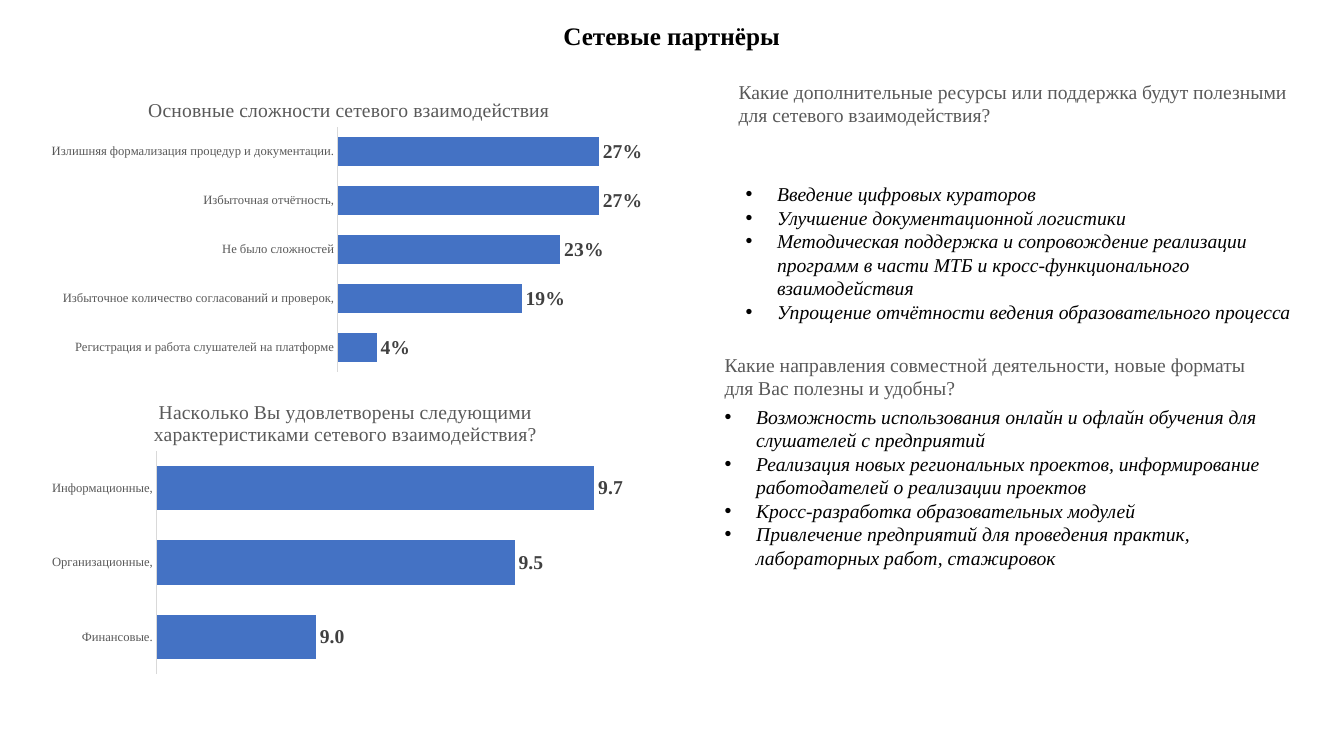
import pptx
import pptx.chart.data
import pptx.dml.color
import pptx.enum.chart
import pptx.enum.text
import pptx.oxml
import pptx.oxml.ns
import pptx.util

Pt = pptx.util.Pt
FONT = "Times New Roman"
BLACK, GREY, DARK, PALE, BLUE = "000000", "595959", "404040", "D9D9D9", "4472C4"

# Content
HEADING = "Сетевые партнёры"
CHARTS = [
    {
        "title": "Основные сложности сетевого взаимодействия",
        "bars": [
            ("Регистрация и работа слушателей на платформе", 0.04),
            ("Избыточное количество согласований и проверок,", 0.19),
            ("Не было сложностей", 0.23),
            ("Избыточная отчётность,", 0.27),
            ("Излишняя формализация процедур и документации.", 0.27),
        ],
        "format": "0%",
        "scale": (0, 0.3),
        "title_at": (0.17, 0.06),
        "plot": (0.49, 0.17, 0.48, 0.81),
    },
    {
        "title": "Насколько Вы удовлетворены следующими\n"
                 "характеристиками сетевого взаимодействия?",
        "bars": [("Финансовые.", 9.0), ("Организационные,", 9.5), ("Информационные,", 9.7)],
        "format": "#,##0.0",
        "scale": (8.6, 9.8),
        "title_at": (0.18, 0.06),
        "plot": (0.19, 0.24, 0.79, 0.74),
    },
]
QUESTIONS = [
    ("Какие дополнительные ресурсы или поддержка будут полезными для сетевого взаимодействия?",
     (520.5, 53.5, 411, 41)),
    ("Какие направления совместной деятельности, новые форматы для Вас полезны и удобны?",
     (510.5, 248.5, 399, 41)),
]
ANSWERS = [
    (["Введение цифровых кураторов",
      "Улучшение документационной логистики",
      "Методическая поддержка и сопровождение реализации программ в части МТБ "
      "и кросс-функционального взаимодействия",
      "Упрощение отчётности ведения образовательного процесса"],
     (525.5, 126.5, 405, 109)),
    (["Возможность использования онлайн и офлайн обучения для слушателей с предприятий",
      "Реализация новых региональных проектов, информирование работодателей о реализации проектов",
      "Кросс-разработка образовательных модулей",
      "Привлечение предприятий для проведения практик, лабораторных работ, стажировок"],
     (510.5, 285.5, 431, 126)),
]
CHART_LEFT, CHART_TOP, CHART_WIDTH, CHART_HEIGHT = 30, 54, 431.5, 216


def color(hex_string):
    return pptx.dml.color.RGBColor.from_string(hex_string)


def style(font, size, hex_string, bold=False, italic=False):
    font.name, font.size = FONT, Pt(size)
    font.bold, font.italic = bold, italic
    font.color.rgb = color(hex_string)


def manual_layout(x, y, w=None, h=None):
    """Layout in fractions of the chart area; with a size it is the inner plot."""
    values = [("xMode", "edge"), ("yMode", "edge"), ("x", x), ("y", y)]
    if w is not None:
        values = [("layoutTarget", "inner")] + values + [("w", w), ("h", h)]
    items = "".join(f'<c:{tag} val="{value}"/>' for tag, value in values)
    return pptx.oxml.parse_xml(
        f'<c:layout {pptx.oxml.ns.nsdecls("c")}><c:manualLayout>{items}</c:manualLayout></c:layout>')


def set_layout(parent, layout, index):
    for old in parent.findall(pptx.oxml.ns.qn("c:layout")):
        parent.remove(old)
    parent.insert(index, layout)


def add_bars(slide, content, top):
    names, values = zip(*content["bars"])
    data = pptx.chart.data.CategoryChartData(number_format=content["format"])
    data.categories = names
    data.add_series("Series 1", values)
    chart = slide.shapes.add_chart(
        pptx.enum.chart.XL_CHART_TYPE.BAR_CLUSTERED, Pt(CHART_LEFT), Pt(top),
        Pt(CHART_WIDTH), Pt(CHART_HEIGHT), data).chart
    chart.has_legend = False
    style(chart.font, 10, BLACK)

    # Chart title
    chart.has_title = True
    chart.chart_title.include_in_layout = False
    chart.chart_title.text_frame.text = content["title"]
    for paragraph in chart.chart_title.text_frame.paragraphs:
        style(paragraph.runs[0].font, 14, GREY)
    set_layout(chart.chart_title._element, manual_layout(*content["title_at"]), 1)

    # Axes
    names_axis, values_axis = chart.category_axis, chart.value_axis
    names_axis.major_tick_mark = pptx.enum.chart.XL_TICK_MARK.NONE
    names_axis.format.line.color.rgb = color(PALE)
    names_axis.format.line.width = Pt(0.75)
    style(names_axis.tick_labels.font, 9, GREY)
    values_axis.minimum_scale, values_axis.maximum_scale = content["scale"]
    values_axis.has_major_gridlines = False
    values_axis.visible = False

    # Bars and their labels
    plot = chart.plots[0]
    plot.gap_width = 68
    plot.vary_by_categories = False
    fill = plot.series[0].format.fill
    fill.solid()
    fill.fore_color.rgb = color(BLUE)
    plot.has_data_labels = True
    labels = plot.data_labels
    labels.show_value = True
    labels.number_format, labels.number_format_is_linked = content["format"], False
    labels.position = pptx.enum.chart.XL_LABEL_POSITION.OUTSIDE_END
    style(labels.font, 14, DARK, bold=True)
    set_layout(chart._chartSpace.chart.plotArea, manual_layout(*content["plot"]), 0)


def add_text(slide, lines, box, hex_string, bulleted=False):
    frame = slide.shapes.add_textbox(*map(Pt, box)).text_frame
    frame.word_wrap = True
    frame.text = "\n".join(lines)
    for paragraph in frame.paragraphs:
        style(paragraph.runs[0].font, 14, hex_string, italic=bulleted)
        if bulleted:
            properties = paragraph._p.get_or_add_pPr()
            properties.set("marL", str(Pt(22.5)))
            properties.set("indent", str(-Pt(22.5)))
            for bullet in ('<a:buFont {} typeface="Arial"/>', '<a:buChar {} char="•"/>'):
                properties.append(pptx.oxml.parse_xml(bullet.format(pptx.oxml.ns.nsdecls("a"))))


def main():
    deck = pptx.Presentation()
    deck.slide_width, deck.slide_height = Pt(960), Pt(540)
    slide = deck.slides.add_slide(deck.slide_layouts[5])

    # Heading
    heading = slide.shapes.title
    heading.left, heading.top, heading.width, heading.height = map(Pt, (390, 0, 179.5, 54))
    heading.text_frame.text = HEADING
    heading.text_frame.vertical_anchor = pptx.enum.text.MSO_ANCHOR.MIDDLE
    line = heading.text_frame.paragraphs[0]
    line.alignment = pptx.enum.text.PP_ALIGN.CENTER
    line.line_spacing, line.space_after = 0.9, Pt(6)
    style(line.runs[0].font, 18, BLACK, bold=True)

    # Charts on the left
    for row, content in enumerate(CHARTS):
        add_bars(slide, content, CHART_TOP + row * CHART_HEIGHT)

    # Questions and answers on the right
    for question, box in QUESTIONS:
        add_text(slide, [question], box, GREY)
    for answers, box in ANSWERS:
        add_text(slide, answers, box, BLACK, bulleted=True)

    deck.save("out.pptx")


if __name__ == "__main__":
    main()
